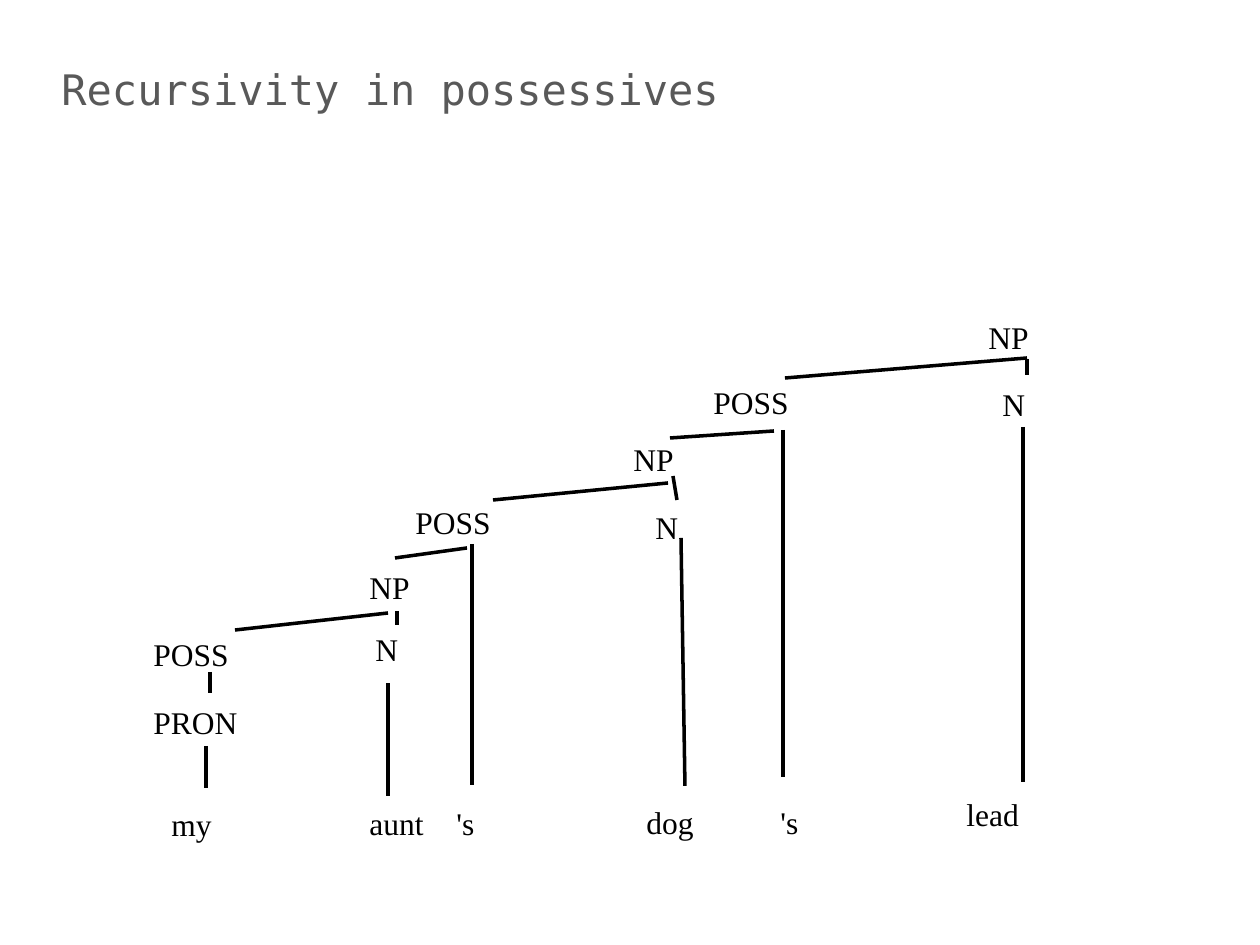
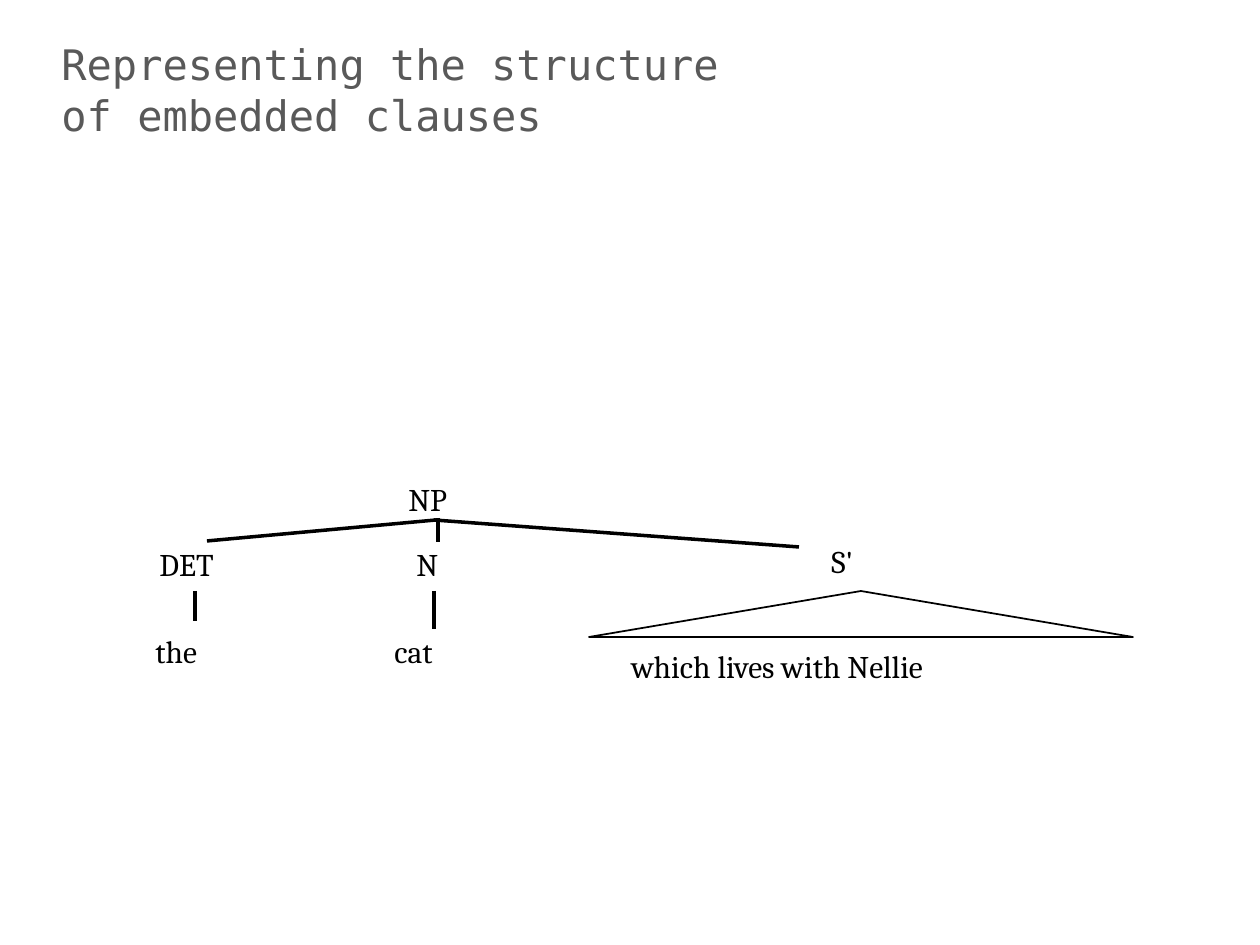
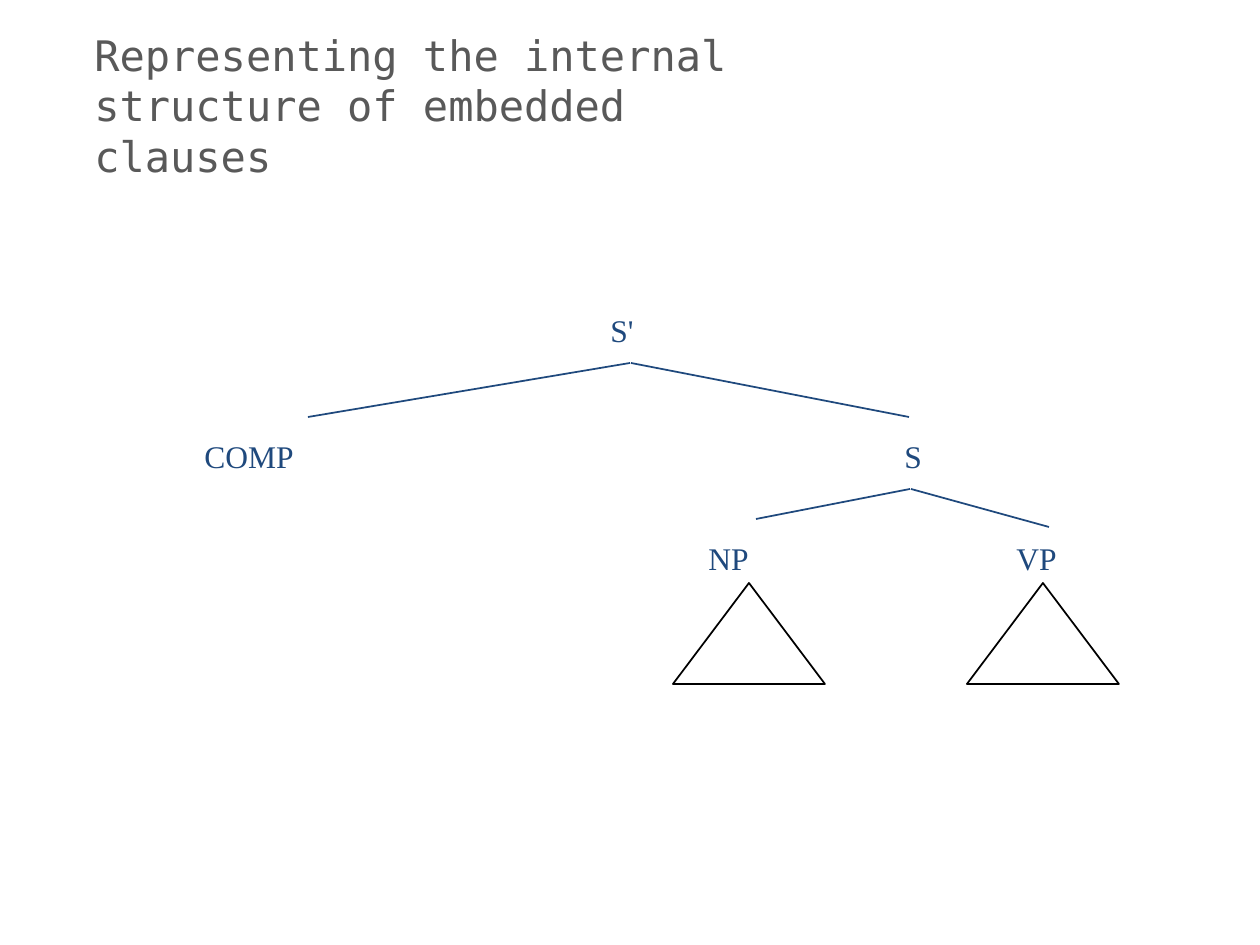
import pptx
import pptx.dml.color
import pptx.enum.shapes
import pptx.enum.text
import pptx.oxml.ns
import pptx.util
from lxml import etree

PX_PER_INCH = 126
BLACK = "000000"
GREY = "595959"
NAVY = "1F497D"
TITLE_FONT = "DejaVu Sans Mono"
LABEL_HEIGHT = 63


def px(length):
    return pptx.util.Emu(round(length * pptx.util.Inches(1) / PX_PER_INCH))


def color(code):
    return pptx.dml.color.RGBColor.from_string(code)


class TreeDeck:
    """Presentation of syntax trees, with the style of the current slide."""

    def __init__(self):
        self.deck = pptx.Presentation()
        self.deck.slide_width = px(10 * PX_PER_INCH)
        self.deck.slide_height = px(7.5 * PX_PER_INCH)

    def start_slide(self, font, ink=BLACK, line_width=2):
        self.slide = self.deck.slides.add_slide(self.deck.slide_layouts[6])
        self.font, self.ink, self.line_width = font, ink, line_width

    def text(self, words, left, top, width, height, font, size, ink):
        box = self.slide.shapes.add_textbox(px(left), px(top), px(width), px(height))
        frame = box.text_frame
        frame.text = words
        span = frame.paragraphs[0].runs[0]
        span.font.name = font
        span.font.size = pptx.util.Pt(size)
        span.font.color.rgb = color(ink)
        return frame

    def title(self, words, left=49, top=24, width=702, height=130):
        frame = self.text(words, left, top, width, height, TITLE_FONT, 24, GREY)
        frame.word_wrap = True
        frame.vertical_anchor = pptx.enum.text.MSO_ANCHOR.MIDDLE

    def label(self, words, left, top, width):
        frame = self.text(words, left, top, width, LABEL_HEIGHT,
                          self.font, 18, self.ink)
        frame.word_wrap = False
        frame.auto_size = pptx.enum.text.MSO_AUTO_SIZE.SHAPE_TO_FIT_TEXT
        return frame

    def labels(self, labels):
        """Add node labels given as (words, left, top, width)."""
        for label in labels:
            self.label(*label)

    def tabbed_label(self, words, left, top, width, tab):
        """Add a label whose second word starts at a tab stop."""
        para = self.label(words, left, top, width).paragraphs[0]
        properties = para._p.get_or_add_pPr()
        stops = etree.SubElement(properties, pptx.oxml.ns.qn("a:tabLst"))
        etree.SubElement(stops, pptx.oxml.ns.qn("a:tab"), pos=str(px(tab)), algn="l")

    def branches(self, branches):
        """Add straight lines given as (x1, y1, x2, y2)."""
        for ends in branches:
            line = self.slide.shapes.add_connector(
                pptx.enum.shapes.MSO_CONNECTOR.STRAIGHT, *map(px, ends))
            line.line.color.rgb = color(self.ink)
            line.line.width = pptx.util.Pt(self.line_width)
            etree.SubElement(line._element.spPr, pptx.oxml.ns.qn("a:effectLst"))

    def triangle(self, left, top, width, height):
        shape = self.slide.shapes.add_shape(
            pptx.enum.shapes.MSO_SHAPE.ISOSCELES_TRIANGLE,
            px(left), px(top), px(width), px(height))
        shape.shadow.inherit = False
        shape.fill.background()
        shape.line.color.rgb = color(BLACK)
        shape.line.width = pptx.util.Pt(1)


def add_possessives(tree):
    tree.start_slide("Times New Roman")
    tree.title("Recursivity in possessives")
    tree.label("my", 159, 799, 78)
    tree.tabbed_label("aunt\t's", 357, 798, 130, 87)
    tree.tabbed_label("dog\t's", 634, 797, 179, 134)
    tree.label("lead", 954, 789, 95)
    tree.label("PRON", 141, 697, 137)
    node_widths = {"POSS": 126, "NP": 78, "N": 55}
    nodes = [
        ("POSS", 141, 629), ("POSS", 403, 497), ("POSS", 701, 377),
        ("NP", 357, 562), ("NP", 621, 434), ("NP", 976, 312),
        ("N", 363, 624), ("N", 643, 502), ("N", 990, 379),
    ]
    tree.labels([(*node, node_widths[node[0]]) for node in nodes])
    tree.branches([
        (1027, 358, 785, 378),
        (774, 431, 670, 438),
        (783, 430, 783, 777),
        (668, 483, 493, 500),
        (467, 548, 395, 558),
        (472, 544, 472, 785),
        (388, 613, 235, 630),
        (210, 672, 210, 693),
        (206, 746, 206, 788),
        (388, 796, 388, 683),
        (685, 786, 681, 538),
        (673, 476, 677, 500),
        (397, 611, 397, 625),
        (1027, 359, 1027, 375),
        (1023, 427, 1023, 782),
    ])


def add_embedded_clause(tree):
    tree.start_slide("Cambria")
    tree.title("Representing the structure of embedded clauses")
    tree.labels([
        ("the", 143, 626, 83),
        ("cat", 382, 626, 81),
        ("which lives with Nellie", 619, 641, 432),
        ("NP", 396, 474, 83),
        ("N", 404, 539, 55),
        ("S'", 819, 536, 60),
        ("DET", 147, 539, 108),
    ])
    tree.branches([
        (438, 518, 438, 542),
        (434, 591, 434, 629),
        (195, 591, 195, 621),
        (436, 520, 207, 541),
        (434, 520, 799, 547),
    ])
    tree.triangle(589, 591, 544, 46)


def add_clause_structure(tree):
    tree.start_slide("Times New Roman", NAVY, 1)
    tree.title("Representing the internal structure of embedded clauses",
               82, 0, 693, 210)
    tree.labels([
        ("S'", 598, 305, 55),
        ("S", 892, 431, 48),
        ("COMP", 192, 431, 144),
        ("NP", 696, 533, 78),
        ("VP", 1004, 533, 78),
    ])
    for left in (673, 967):
        tree.triangle(left, 583, 152, 101)
    tree.branches([
        (630, 363, 308, 417),
        (631, 363, 909, 417),
        (910, 489, 756, 519),
        (911, 489, 1049, 527),
    ])


def main():
    tree = TreeDeck()
    add_possessives(tree)
    add_embedded_clause(tree)
    add_clause_structure(tree)
    tree.deck.save("out.pptx")


if __name__ == "__main__":
    main()
